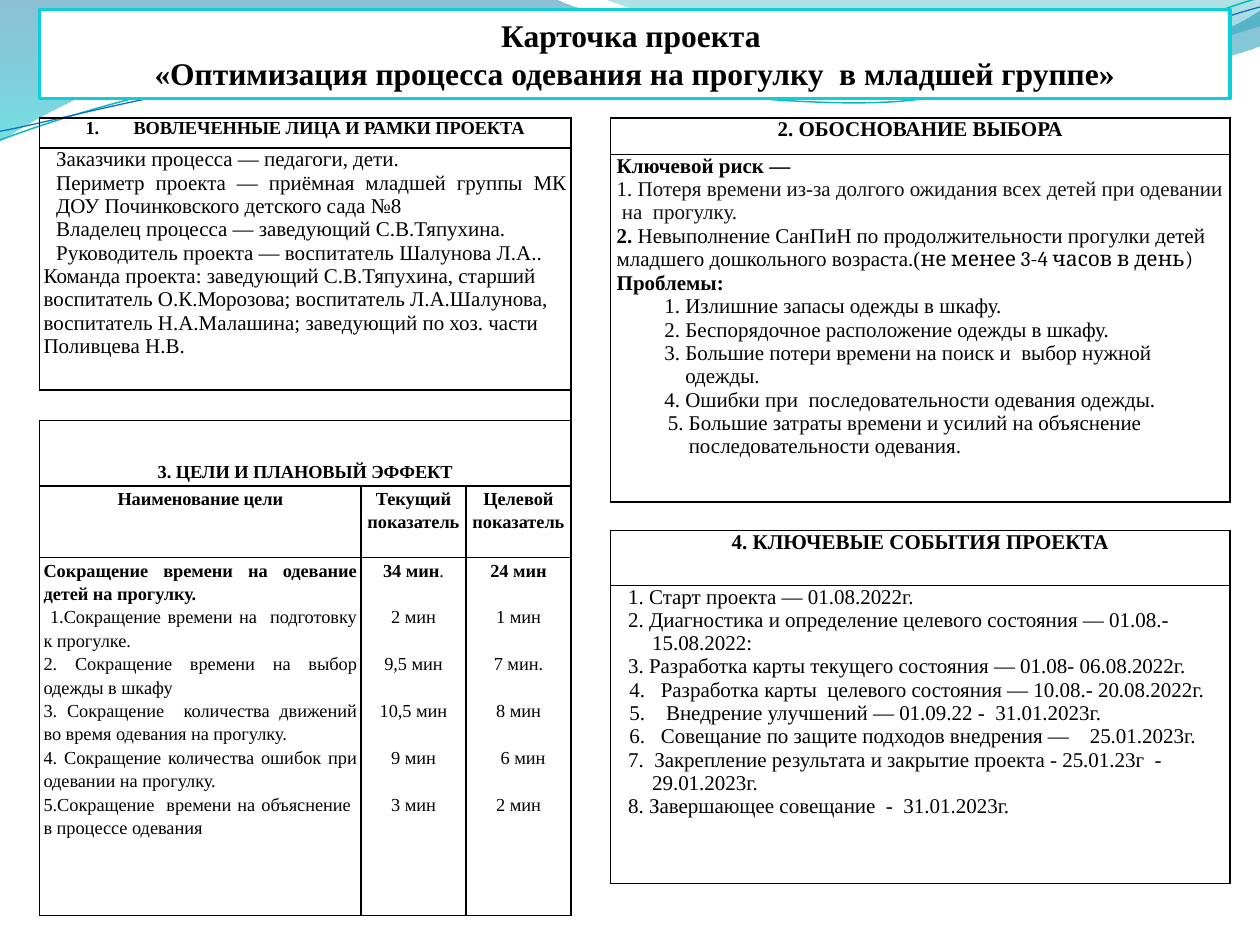
import pptx
import pptx.util
import pptx.dml.color
import pptx.enum.shapes
import pptx.enum.text
import pptx.oxml.ns
import lxml.etree

Pt = pptx.util.Pt
qn = pptx.oxml.ns.qn
ALIGN = pptx.enum.text.PP_ALIGN

THEME = {
    "font": "Times New Roman", "accent_font": "Cambria",
    "ink": "000000", "soft_ink": "111111", "paper": "FFFFFF", "frame": "0BD0D9",
    "title": 18, "body": 12, "small": 10.5, "gap": 6,
}

TITLE = ["Карточка проекта ", "«Оптимизация процесса одевания на прогулку  в младшей группе»"]

WAVES = [
    {"start": (0, 0), "segments": [
        [(317, -0.7)], [(343, 12), (478, 45), (546, 45)], [(614, 45), (690, 27), (720, 6)],
        [(721, 26)], [(708, 32), (626, 55), (537, 54)], [(446, 54), (275, 20), (185, 24)],
        [(93, 26), (33, 60), (-0.7, 81)]],
     "stops": [(0, "0074A1", 45), (1, "00C6CF", 55)]},
    {"start": (345, -0.7), "segments": [
        [(366, 8), (491, 45), (554, 47)], [(616, 50), (692, 23), (720, 15)], [(720, 0)]],
     "stops": [(0, "00A1A9", 30), (0.8, "008BBF", 45)]},
    {"start": (0, 80), "segments": [
        [(35, 67), (114, 41), (199, 37)], [(284, 34), (427, 64), (513, 58)],
        [(600, 51), (675, 11), (719, -1)]], "line": ("0AB8BF", 0.85)},
    {"start": (0, 75), "segments": [
        [(34, 69), (118, 44), (204, 40)], [(290, 37), (430, 60), (516, 54)],
        [(602, 48), (678, 15), (720, 4)]], "line": ("0F6FC6", 0.75)},
]

HEAD = {"align": ALIGN.CENTER, "indent": (27.4, -27.4), "gap": THEME["gap"], "bold": True}
SMALL_HEAD = {**HEAD, "size": THEME["small"]}
PERSON = {"align": ALIGN.JUSTIFY, "indent": (7.2, 0)}
GOAL = {"align": ALIGN.JUSTIFY, "size": THEME["small"], "spacing": 1.15}
VALUE = {**GOAL, "align": ALIGN.CENTER}
BOLD = {"bold": True}
PROBLEM = {"indent": (27.2, 0)}
EVENT = {"indent": (20.2, -13.7)}
NUMBERED = {"indent": (25.2, -18), "number": 4}


def styled(style, *lines):
    return [(line, style) for line in lines]


def values(total, *rest):
    return [(total, {**VALUE, **BOLD})] + styled({**VALUE, "before": 13.4}, *rest)


TABLES = [
    {"at": (22.7, 67.4), "columns": [183.6, 60, 60], "rows": [17.3, 138.2, 17.3, 37.5, 41, 204.6],
     "inset": 2.2, "spacer_sides": "R", "cells": [
        [styled({**SMALL_HEAD, "number": 1}, "ВОВЛЕЧЕННЫЕ ЛИЦА И РАМКИ ПРОЕКТА")],
        [styled(PERSON,
                "Заказчики процесса — педагоги, дети.",
                "Периметр проекта — приёмная младшей группы МК ДОУ Починковского детского сада №8",
                "Владелец процесса — заведующий С.В.Тяпухина.",
                "Руководитель проекта — воспитатель Шалунова Л.А..")
         + styled({}, "Команда проекта: заведующий С.В.Тяпухина, старший воспитатель О.К.Морозова; "
                      "воспитатель Л.А.Шалунова, воспитатель Н.А.Малашина; "
                      "заведующий по хоз. части Поливцева Н.В.")],
        [[]],
        [styled({**SMALL_HEAD, "top": 23.7}, "3. ЦЕЛИ И ПЛАНОВЫЙ ЭФФЕКТ")],
        [styled({**VALUE, **BOLD}, name)
         for name in ("Наименование цели", "Текущий показатель", "Целевой показатель")],
        [styled({**GOAL, **BOLD}, "Сокращение времени на одевание детей на прогулку.")
         + styled(GOAL,
                  " 1.Сокращение времени на  подготовку к прогулке. ",
                  "2. Сокращение времени на выбор одежды в шкафу",
                  "3. Сокращение  количества движений во время одевания на прогулку.",
                  "4. Сокращение количества ошибок при одевании на прогулку.",
                  "5.Сокращение  времени на объяснение  в процессе одевания"),
         values([("34 мин", BOLD), (".", {"bold": False})],
                "2 мин", "9,5 мин", "10,5 мин", "9 мин", "3 мин"),
         values("24 мин", "1 мин", "7 мин.", "8 мин", "  6 мин", "2 мин")],
     ]},
    {"at": (348.8, 67.4), "columns": [354.2], "rows": [20.9, 198.5, 16.3, 31.4, 170.5],
     "inset": 3.6, "spacer_sides": "", "cells": [
        [styled(HEAD, "2. ОБОСНОВАНИЕ ВЫБОРА")],
        [[("Ключевой риск —", BOLD),
          ("1. Потеря времени из-за долгого ожидания всех детей при одевании  на  прогулку.",
           {"color": THEME["soft_ink"]}),
          ([("2. ", BOLD),
            ("Невыполнение СанПиН по продолжительности прогулки детей "
             "младшего дошкольного возраста.(", {}),
            ("не менее 3-4 часов в день)", {"font": THEME["accent_font"]})], {}),
          ("Проблемы:", BOLD)]
         + styled(PROBLEM,
                  "1. Излишние запасы одежды в шкафу.",
                  "2. Беспорядочное расположение одежды в шкафу.",
                  "3. Большие потери времени на поиск и  выбор нужной")
         + styled({"indent": (39.2, 0)}, "одежды.")
         + styled(PROBLEM, "4. Ошибки при  последовательности одевания одежды.")
         + styled({"indent": (29.2, 0)}, "5. Большие затраты времени и усилий на объяснение")
         + styled({"indent": (41.2, 0)}, "последовательности одевания.")],
        [[]],
        [styled(HEAD, "4. КЛЮЧЕВЫЕ СОБЫТИЯ ПРОЕКТА")],
        [styled(EVENT,
                "1. Старт проекта — 01.08.2022г.",
                "2. Диагностика и определение целевого состояния — 01.08.- 15.08.2022:",
                "3. Разработка карты текущего состояния — 01.08- 06.08.2022г.")
         + styled(NUMBERED,
                  "Разработка карты  целевого состояния — 10.08.- 20.08.2022г.",
                  " Внедрение улучшений — 01.09.22 -  31.01.2023г.",
                  "Совещание по защите подходов внедрения —    25.01.2023г.")
         + styled(EVENT,
                  "7.  Закрепление результата и закрытие проекта - 25.01.23г  - 29.01.2023г.",
                  "8. Завершающее совещание  -  31.01.2023г.")],
     ]},
]


def rgb(color):
    return pptx.dml.color.RGBColor.from_string(color)


def set_font(font, size, bold=False, color=THEME["ink"], name=THEME["font"]):
    font.size, font.bold, font.name = Pt(size), bold, name
    font.color.rgb = rgb(color)


def bend(shape, segments):
    nodes = iter(list(shape._element.iter(qn("a:lnTo"))))
    for segment in segments:
        corners = [next(nodes) for _ in segment]
        if len(corners) == 3:
            curve = lxml.etree.Element(qn("a:cubicBezTo"))
            corners[0].addprevious(curve)
            for corner in corners:
                curve.append(corner[0])
                corner.getparent().remove(corner)


def add_wave(page, wave):
    builder = page.shapes.build_freeform(*map(Pt, wave["start"]))
    builder.add_line_segments([(Pt(x), Pt(y)) for segment in wave["segments"] for x, y in segment],
                              close="stops" in wave)
    shape = builder.convert_to_shape()
    bend(shape, wave["segments"])
    shape.shadow.inherit = False
    if "line" in wave:
        color, width = wave["line"]
        shape.fill.background()
        shape.line.color.rgb, shape.line.width = rgb(color), Pt(width)
        return
    shape.line.fill.background()
    shape.fill.gradient()
    shape.fill.gradient_angle = 270
    for stop, (position, color, _) in zip(shape.fill.gradient_stops, wave["stops"]):
        stop.position, stop.color.rgb = position, rgb(color)
    for node, (_, _, opacity) in zip(shape._element.iter(qn("a:srgbClr")), wave["stops"]):
        lxml.etree.SubElement(node, qn("a:alpha"), val=str(opacity * 1000))


def write_para(para, content, style):
    props = para._p.get_or_add_pPr()
    if "indent" in style:
        margin, first = style["indent"]
        props.set("marL", str(Pt(margin)))
        props.set("indent", str(Pt(first)))
    if "number" in style:
        lxml.etree.SubElement(props, qn("a:buAutoNum"), type="arabicPeriod",
                              startAt=str(style["number"]))
    para.alignment = style.get("align", ALIGN.LEFT)
    para.line_spacing = style.get("spacing", 1.0)
    para.space_before = Pt(style.get("before", style.get("gap", 0)))
    para.space_after = Pt(style.get("gap", 0))
    size, bold = style.get("size", THEME["body"]), style.get("bold", False)
    set_font(para.font, size, bold, style.get("color", THEME["ink"]))
    if isinstance(content, str):
        para.add_run().text = content
        return
    for text, change in content:
        span = para.add_run()
        span.text = text
        set_font(span.font, size, change.get("bold", bold), name=change.get("font", THEME["font"]))


def set_borders(cell, sides):
    props = cell._tc.get_or_add_tcPr()
    for index, side in enumerate("LRTB"):
        line = lxml.etree.Element(qn("a:ln" + side), w=str(Pt(1)))
        if side in sides:
            fill = lxml.etree.SubElement(line, qn("a:solidFill"))
            lxml.etree.SubElement(fill, qn("a:srgbClr"), val=THEME["ink"])
        else:
            lxml.etree.SubElement(line, qn("a:noFill"))
        props.insert(index, line)


def add_card(page, card):
    columns, rows = card["columns"], card["rows"]
    frame = page.shapes.add_table(len(rows), len(columns), *map(Pt, card["at"]),
                                  Pt(sum(columns)), Pt(sum(rows)))
    table = frame.table
    table.first_row = table.horz_banding = False
    for column, width in zip(table.columns, columns):
        column.width = Pt(width)
    for index, (height, contents) in enumerate(zip(rows, card["cells"])):
        table.rows[index].height = Pt(height)
        sides = "LRTB" if contents[0] else "TB" + card["spacer_sides"]
        for cell in table.rows[index].cells:
            cell.fill.background()
            set_borders(cell, sides)
            cell.margin_left = cell.margin_right = Pt(card["inset"])
            cell.margin_top = cell.margin_bottom = 0
        if len(contents) < len(columns):
            table.cell(index, 0).merge(table.cell(index, len(columns) - 1))
        for position, lines in enumerate(contents):
            cell = table.cell(index, position)
            body = cell.text_frame
            if not lines:
                lxml.etree.SubElement(body.paragraphs[0]._p, qn("a:endParaRPr"), sz="600")
            for number, (content, style) in enumerate(lines):
                cell.margin_top = Pt(style.get("top", 0))
                para = body.add_paragraph() if number else body.paragraphs[0]
                write_para(para, content, style)


def add_title(page):
    box = page.shapes.add_shape(pptx.enum.shapes.MSO_SHAPE.RECTANGLE,
                                Pt(22.6), Pt(5.4), Pt(680.4), Pt(51))
    box.shadow.inherit = False
    box.fill.solid()
    box.fill.fore_color.rgb = rgb(THEME["paper"])
    box.line.color.rgb, box.line.width = rgb(THEME["frame"]), Pt(2)
    body = box.text_frame
    body.word_wrap = True
    body.auto_size = pptx.enum.text.MSO_AUTO_SIZE.SHAPE_TO_FIT_TEXT
    body.vertical_anchor = pptx.enum.text.MSO_ANCHOR.MIDDLE
    for number, line in enumerate(TITLE):
        para = body.add_paragraph() if number else body.paragraphs[0]
        write_para(para, line, {"align": ALIGN.CENTER, "size": THEME["title"], "bold": True})


def main():
    deck = pptx.Presentation()
    deck.slide_width, deck.slide_height = Pt(720), Pt(540)
    page = deck.slides.add_slide(deck.slide_layouts[6])
    for wave in WAVES:
        add_wave(page, wave)
    for card in TABLES:
        add_card(page, card)
    add_title(page)
    deck.save("out.pptx")


if __name__ == "__main__":
    main()
